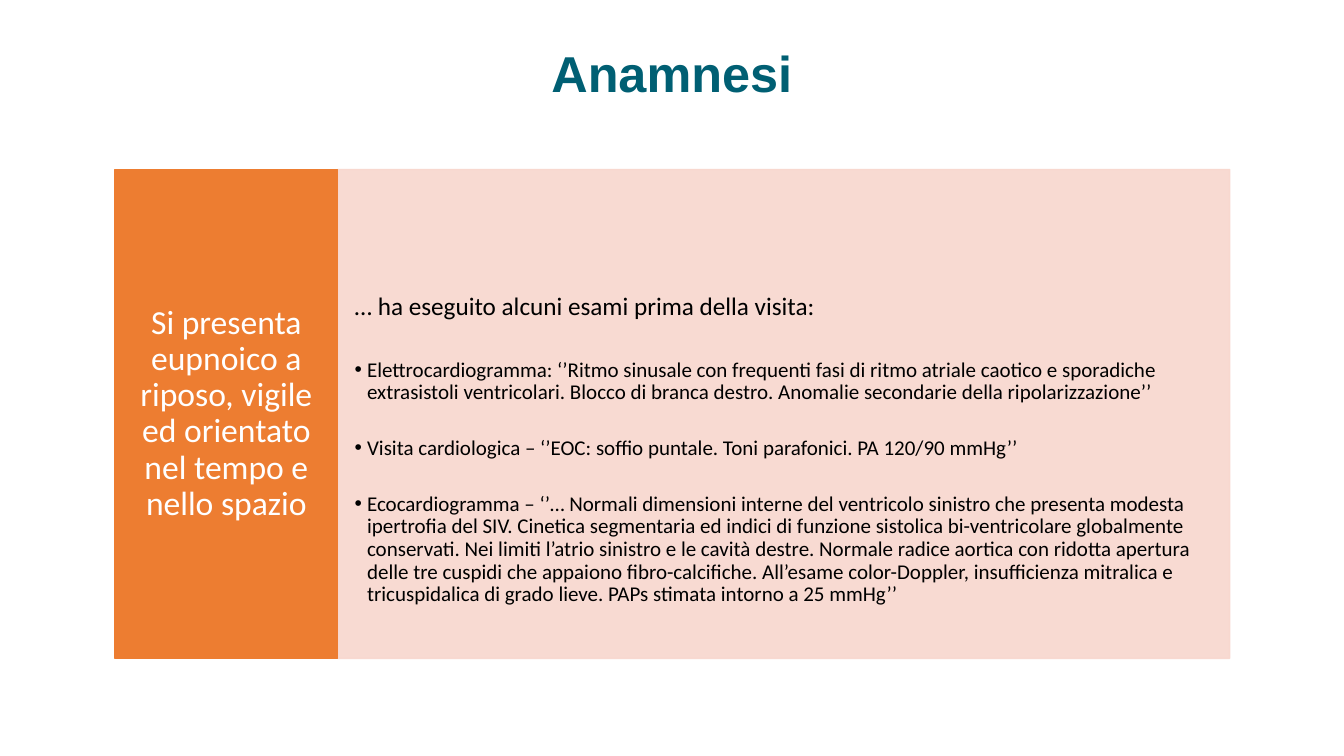
from dataclasses import dataclass

from lxml.etree import SubElement
from pptx import Presentation
from pptx.dml.color import RGBColor
from pptx.enum.shapes import MSO_SHAPE
from pptx.enum.text import MSO_ANCHOR, MSO_AUTO_SIZE, PP_ALIGN
from pptx.oxml.ns import qn
from pptx.util import Cm, Pt


@dataclass(frozen=True)
class Theme:
    heading_font: str = "Arial"
    body_font: str = "Calibri"
    teal: RGBColor = RGBColor(0x00, 0x5F, 0x73)
    orange: RGBColor = RGBColor(0xED, 0x7D, 0x31)
    blush: RGBColor = RGBColor(0xF8, 0xD7, 0xCE)
    black: RGBColor = RGBColor(0, 0, 0)
    white: RGBColor = RGBColor(0xFF, 0xFF, 0xFF)
    title_size: int = 36
    status_size: int = 24
    lead_size: int = 18
    exam_size: int = 15


@dataclass(frozen=True)
class Box:
    left: float
    top: float
    width: float
    height: float


THEME = Theme()
STATUS = "Si presenta eupnoico a riposo, vigile ed orientato nel tempo e nello spazio"
LEAD = "… ha eseguito alcuni esami prima della visita:"
EXAMS = [
    "Elettrocardiogramma: ‘’Ritmo sinusale con frequenti fasi di ritmo atriale caotico "
    "e sporadiche extrasistoli ventricolari. Blocco di branca destro. Anomalie secondarie "
    "della ripolarizzazione’’",
    "Visita cardiologica – ‘’EOC: soffio puntale. Toni parafonici. PA 120/90 mmHg’’",
    "Ecocardiogramma – ‘’… Normali dimensioni interne del ventricolo sinistro che presenta "
    "modesta ipertrofia del SIV. Cinetica segmentaria ed indici di funzione sistolica "
    "bi-ventricolare globalmente conservati. Nei limiti l’atrio sinistro e le cavità destre. "
    "Normale radice aortica con ridotta apertura delle tre cuspidi che appaiono "
    "fibro-calcifiche. All’esame color-Doppler, insufficienza mitralica e tricuspidalica "
    "di grado lieve. PAPs stimata intorno a 25 mmHg’’",
]


def place(shape, box):
    shape.left, shape.top = Cm(box.left), Cm(box.top)
    shape.width, shape.height = Cm(box.width), Cm(box.height)


def set_frame(frame, anchor, side, edge):
    frame.word_wrap = True
    frame.auto_size = MSO_AUTO_SIZE.NONE
    frame.vertical_anchor = anchor
    frame.margin_left = frame.margin_right = Cm(side)
    frame.margin_top = frame.margin_bottom = Cm(edge)


def paint(shape, color):
    shape.fill.solid()
    shape.fill.fore_color.rgb = color
    shape.line.color.rgb = color
    shape.line.width = Pt(1)


def write(para, text, size, color, font=THEME.body_font, bold=False):
    span = para.add_run()
    span.text = text
    span.font.name, span.font.size, span.font.bold = font, Pt(size), bold
    span.font.color.rgb = color


def space(para, line=0.9, before=0, after=0):
    para.line_spacing = line
    para.space_before, para.space_after = Pt(before), Pt(after)


def set_bullet(para, symbol=None, indent=0):
    properties = para._p.get_or_add_pPr()
    properties.set("marL", str(Cm(indent)))
    properties.set("indent", str(-Cm(indent)))
    if symbol:
        SubElement(properties, qn("a:buChar")).set("char", symbol)
    else:
        SubElement(properties, qn("a:buNone"))


def add_title(page, box):
    title = page.shapes.title
    place(title, box)
    set_frame(title.text_frame, MSO_ANCHOR.TOP, 0.25, 0.13)
    para = title.text_frame.paragraphs[0]
    para.alignment = PP_ALIGN.CENTER
    space(para, line=1, after=6)
    write(para, "Anamnesi", THEME.title_size, THEME.teal, THEME.heading_font, True)


def add_exams(page, box):
    body = page.placeholders[1]
    place(body, box)
    paint(body, THEME.blush)
    for color in body._element.spPr.iter(qn("a:srgbClr")):
        SubElement(color, qn("a:alpha")).set("val", "90000")
    frame = body.text_frame
    set_frame(frame, MSO_ANCHOR.TOP, 0.43, 3.12)

    # Lead line
    lead = frame.paragraphs[0]
    space(lead, after=4)
    set_bullet(lead)
    write(lead, LEAD, THEME.lead_size, THEME.black)

    # Exam list
    for exam in EXAMS:
        para = frame.add_paragraph()
        space(para, before=23.5)
        set_bullet(para, "•", 0.31)
        write(para, exam, THEME.exam_size, THEME.black)


def add_status(page, box):
    panel = page.shapes.add_shape(MSO_SHAPE.RECTANGLE, 0, 0, 0, 0)
    place(panel, box)
    panel.shadow.inherit = False
    paint(panel, THEME.orange)
    set_frame(panel.text_frame, MSO_ANCHOR.MIDDLE, 0.3, 1.22)
    para = panel.text_frame.paragraphs[0]
    para.alignment = PP_ALIGN.CENTER
    space(para)
    write(para, STATUS, THEME.status_size, THEME.white)


def add_history_page(deck):
    page = deck.slides.add_slide(deck.slide_layouts[1])
    panels = Box(2.9, 4.27, 28.09, 12.32)
    status_width = 5.61
    add_title(page, Box(2.77, 0.94, 28.32, 3.05))
    add_exams(page, Box(panels.left + status_width, panels.top,
                        panels.width - status_width, panels.height))
    add_status(page, Box(panels.left, panels.top, status_width, panels.height))


def main():
    deck = Presentation()
    deck.slide_width, deck.slide_height = Cm(33.87), Cm(19.05)
    add_history_page(deck)
    deck.save("out.pptx")


if __name__ == "__main__":
    main()
